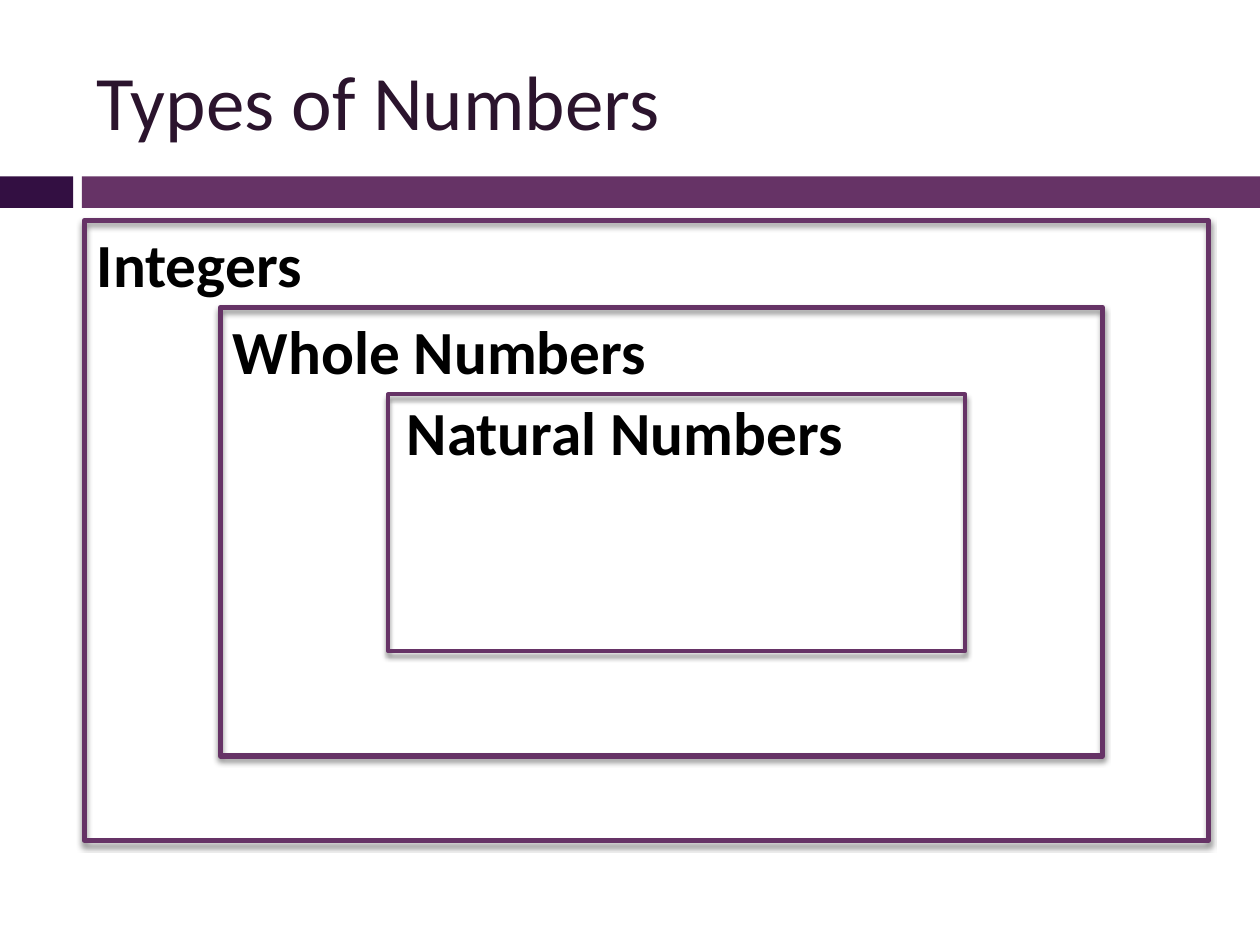
from dataclasses import dataclass

import pptx
import pptx.dml.color
import pptx.enum.shapes
import pptx.enum.text
import pptx.oxml
import pptx.oxml.ns
import pptx.util
from pptx.util import Inches


@dataclass(frozen=True)
class Theme:
    font: str = "Calibri"
    purple: str = "663366"
    dark_purple: str = "330F42"
    title_color: str = "2B142D"
    label_color: str = "000000"
    title_size: float = 44
    label_size: float = 35


THEME = Theme()
SHADOW = (
    '<a:outerShdw %s blurRad="38100" dist="30000" dir="5400000" rotWithShape="0">'
    '<a:srgbClr val="000000"><a:alpha val="45000"/></a:srgbClr></a:outerShdw>'
    % pptx.oxml.ns.nsdecls("a")
)


def rgb(color):
    return pptx.dml.color.RGBColor.from_string(color)


def add_rectangle(slide, left, top, width, height):
    shape = slide.shapes.add_shape(
        pptx.enum.shapes.MSO_SHAPE.RECTANGLE,
        Inches(left), Inches(top), Inches(width), Inches(height))
    shape.shadow.inherit = False
    return shape


def add_text(slide, box, text, size, color, bold=False):
    shape = slide.shapes.add_textbox(*(Inches(length) for length in box))
    text_frame = shape.text_frame
    text_frame.word_wrap = True
    text_frame.text = text
    font = text_frame.paragraphs[0].runs[0].font
    font.name = THEME.font
    font.size = pptx.util.Pt(size)
    font.bold = bold
    font.color.rgb = rgb(color)
    return text_frame


def add_header_band(slide, left, top, width, height):
    """Draw a short dark block and a long bar, with a gap between them."""
    block_width, gap = 0.58, 0.07
    bar_offset = block_width + gap
    for offset, part_width, color in (
            (0, block_width, THEME.dark_purple),
            (bar_offset, width - bar_offset, THEME.purple)):
        part = add_rectangle(slide, left + offset, top, part_width, height)
        part.fill.solid()
        part.fill.fore_color.rgb = rgb(color)
        part.line.fill.background()


def add_title(slide, left, top, width, height):
    text_frame = add_text(slide, (left, top, width, height), "Types of Numbers",
                          THEME.title_size, THEME.title_color)
    text_frame.vertical_anchor = pptx.enum.text.MSO_ANCHOR.MIDDLE


def add_number_set(slide, box, name, label_width, line_width=3, label_shift=(0, 0)):
    """Draw an outlined, shadowed box with its name in the top left corner."""
    left, top, width, height = box
    frame = add_rectangle(slide, left, top, width, height)
    frame.fill.background()
    frame.line.color.rgb = rgb(THEME.purple)
    frame.line.width = pptx.util.Pt(line_width)
    effects = frame.element.spPr.find(pptx.oxml.ns.qn("a:effectLst"))
    effects.append(pptx.oxml.parse_xml(SHADOW))

    shift_x, shift_y = label_shift
    text_frame = add_text(
        slide, (left + shift_x, top + shift_y, label_width, 0.69), name,
        THEME.label_size, THEME.label_color, bold=True)
    text_frame.auto_size = pptx.enum.text.MSO_AUTO_SIZE.SHAPE_TO_FIT_TEXT


def main():
    presentation = pptx.Presentation()
    presentation.slide_width = Inches(10)
    presentation.slide_height = Inches(7.5)
    slide = presentation.slides.add_slide(presentation.slide_layouts[6])

    add_header_band(slide, 0, 1.4, 10, 0.25)
    add_title(slide, 0.67, 0.25, 8.92, 1.08)
    add_number_set(slide, (0.67, 1.75, 8.92, 4.92), "Integers", 3.08)
    add_number_set(slide, (1.75, 2.44, 7, 3.56), "Whole Numbers", 4.83)
    add_number_set(slide, (3.08, 3.13, 4.58, 2.04), "Natural Numbers", 3.75,
                   line_width=2.25, label_shift=(0.05, -0.05))

    presentation.save("out.pptx")


if __name__ == "__main__":
    main()
